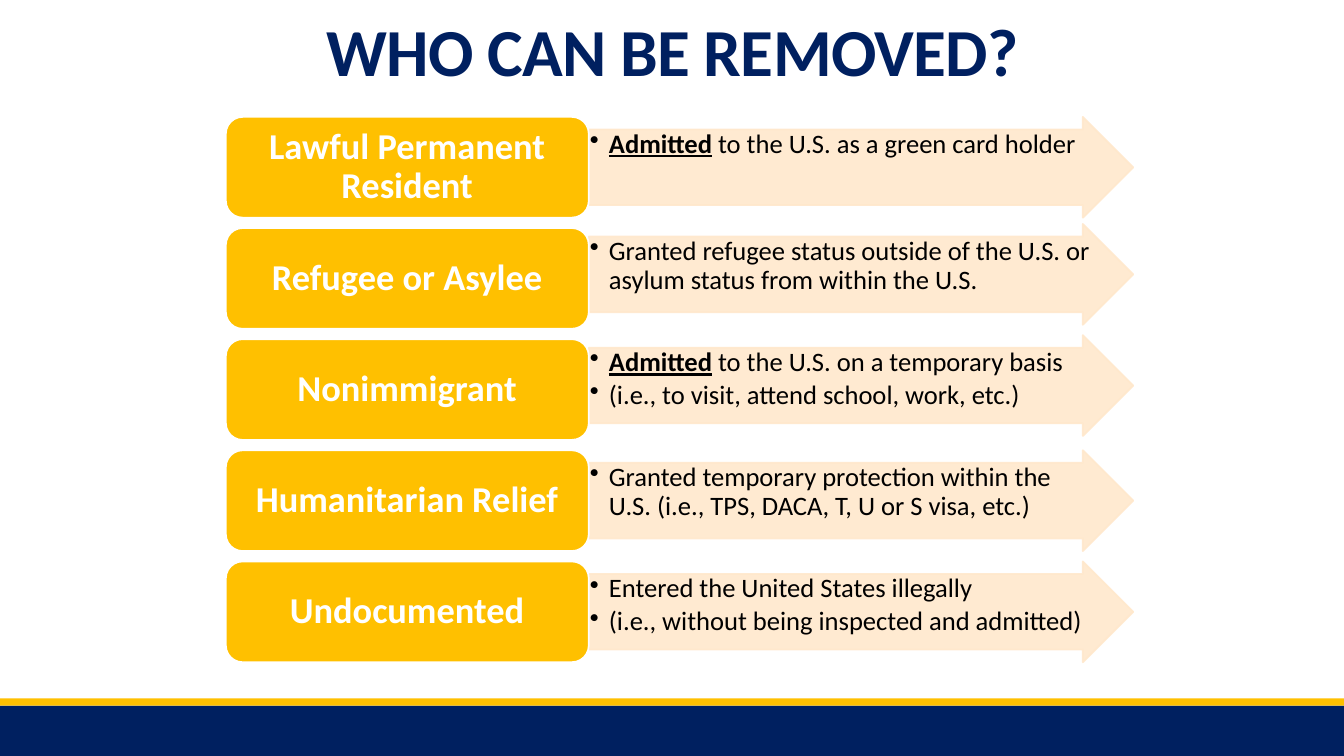
from lxml import etree
from pptx import Presentation
from pptx import util as u
from pptx.dml.color import RGBColor
from pptx.enum import shapes, text
from pptx.oxml.ns import qn

NAVY, GOLD, PEACH, WHITE, BLACK = "002060", "FFC000", "FFE8CC", "FFFFFF", "000000"
ADMITTED = ("Admitted", True)
CATEGORIES = [
    ("Lawful Permanent Resident", 0,
     [[ADMITTED, (" to the U.S. as a green card holder", False)]]),
    ("Refugee or Asylee", -0.04,
     [[("Granted refugee status outside of the U.S. or asylum status from within the U.S.", False)]]),
    ("Nonimmigrant", -0.04,
     [[ADMITTED, (" to the U.S. on a temporary basis", False)],
      [("(i.e., to visit, attend school, work, etc.)", False)]]),
    ("Humanitarian Relief", 0,
     [[("Granted temporary protection within the U.S. (i.e., TPS, DACA, T, U or S visa, etc.)", False)]]),
    ("Undocumented", 0,
     [[("Entered the United States illegally", False)],
      [("(i.e., without being inspected and admitted)", False)]]),
]


def rgb(value):
    """Turn a hex string into a colour."""
    return RGBColor.from_string(value)


def add_block(s, kind, box, fill, line=None):
    """Add a filled preset shape, outlined if a line colour is given."""
    sp = s.shapes.add_shape(kind, *(u.Inches(v) for v in box))
    sp.shadow.inherit = False
    sp.fill.solid()
    sp.fill.fore_color.rgb = rgb(fill)
    if line:
        sp.line.color.rgb = rgb(line)
        sp.line.width = u.Pt(1.25)
    else:
        sp.line.fill.background()
    return sp


def set_frame(tf, inset_x, inset_y, anchor):
    """Set wrapping, insets and anchor of a text frame."""
    tf.word_wrap = True
    tf.margin_left = tf.margin_right = u.Inches(inset_x)
    tf.margin_top = tf.margin_bottom = u.Inches(inset_y)
    tf.vertical_anchor = anchor


def add_run(p, words, size, color, bold=False):
    """Add one formatted run to a paragraph."""
    r = p.add_run()
    r.text = words
    r.font.name = "Calibri"
    r.font.size = u.Pt(size)
    r.font.bold = bold
    r.font.color.rgb = rgb(color)
    return r


def set_bullet(p, indent):
    """Give a paragraph a hanging round bullet."""
    pPr = p._p.get_or_add_pPr()
    pPr.set("marL", str(u.Inches(indent)))
    pPr.set("indent", str(u.Inches(-indent)))
    etree.SubElement(pPr, qn("a:buChar")).set("char", "•")


def add_title(s, box):
    """Place the slide title in its box."""
    tf = s.shapes.add_textbox(*(u.Inches(v) for v in box)).text_frame
    set_frame(tf, 0.1, 0.05, text.MSO_ANCHOR.TOP)
    p = tf.paragraphs[0]
    p.alignment = text.PP_ALIGN.CENTER
    p.line_spacing = 0.85
    r = add_run(p, "WHO CAN BE REMOVED?", 48, NAVY, True)
    r.font._element.set("spc", "-50")


def add_arrow(s, box, bullets):
    """Place a translucent arrow holding bulleted text."""
    sp = add_block(s, shapes.MSO_SHAPE.RIGHT_ARROW, box, PEACH, PEACH)
    sp.adjustments[0], sp.adjustments[1] = 0.75, 0.5
    for color in sp._element.spPr.iter(qn("a:srgbClr")):
        etree.SubElement(color, qn("a:alpha")).set("val", "90000")
    tf = sp.text_frame
    set_frame(tf, 0.01, 0.01, text.MSO_ANCHOR.TOP)
    for i, runs in enumerate(bullets):
        p = tf.add_paragraph() if i else tf.paragraphs[0]
        p.alignment = text.PP_ALIGN.LEFT
        p.line_spacing = 0.9
        p.space_after = u.Pt(3)
        set_bullet(p, 0.19)
        for words, strong in runs:
            r = add_run(p, words, 19, BLACK, strong)
            r.font.underline = strong


def add_label(s, box, words):
    """Place a rounded category label."""
    sp = add_block(s, shapes.MSO_SHAPE.ROUNDED_RECTANGLE, box, GOLD, WHITE)
    tf = sp.text_frame
    set_frame(tf, 0.11, 0.05, text.MSO_ANCHOR.MIDDLE)
    p = tf.paragraphs[0]
    p.alignment = text.PP_ALIGN.CENTER
    p.line_spacing = 0.9
    add_run(p, words, 26, WHITE, True)


def add_categories(s, left, top, width, height):
    """Place one label and arrow per category, evenly stacked in the box."""
    row = 1
    step = (height - row) / (len(CATEGORIES) - 1)
    label = width * 0.4
    for i, (name, nudge, bullets) in enumerate(CATEGORIES):
        y = top + i * step
        add_arrow(s, (left + label, y + nudge, width - label, row), bullets)
        add_label(s, (left, y, label, row), name)


def add_footer(s, left, top, width, height):
    """Place the navy footer band under its gold rule."""
    rule = 0.07
    add_block(s, shapes.MSO_SHAPE.RECTANGLE, (left, top + rule, width, height - rule), NAVY)
    add_block(s, shapes.MSO_SHAPE.RECTANGLE, (left, top, width, rule), GOLD)


def main():
    """Build and save the slide."""
    prs = Presentation()
    prs.slide_width, prs.slide_height = u.Inches(13.33), u.Inches(7.5)
    s = prs.slides.add_slide(prs.slide_layouts[6])
    add_footer(s, 0, 6.93, 13.33, 0.57)
    add_categories(s, 2.24, 1.16, 9, 5.41)
    add_title(s, (2.17, 0.17, 9, 0.99))
    prs.save("out.pptx")


if __name__ == "__main__":
    main()
